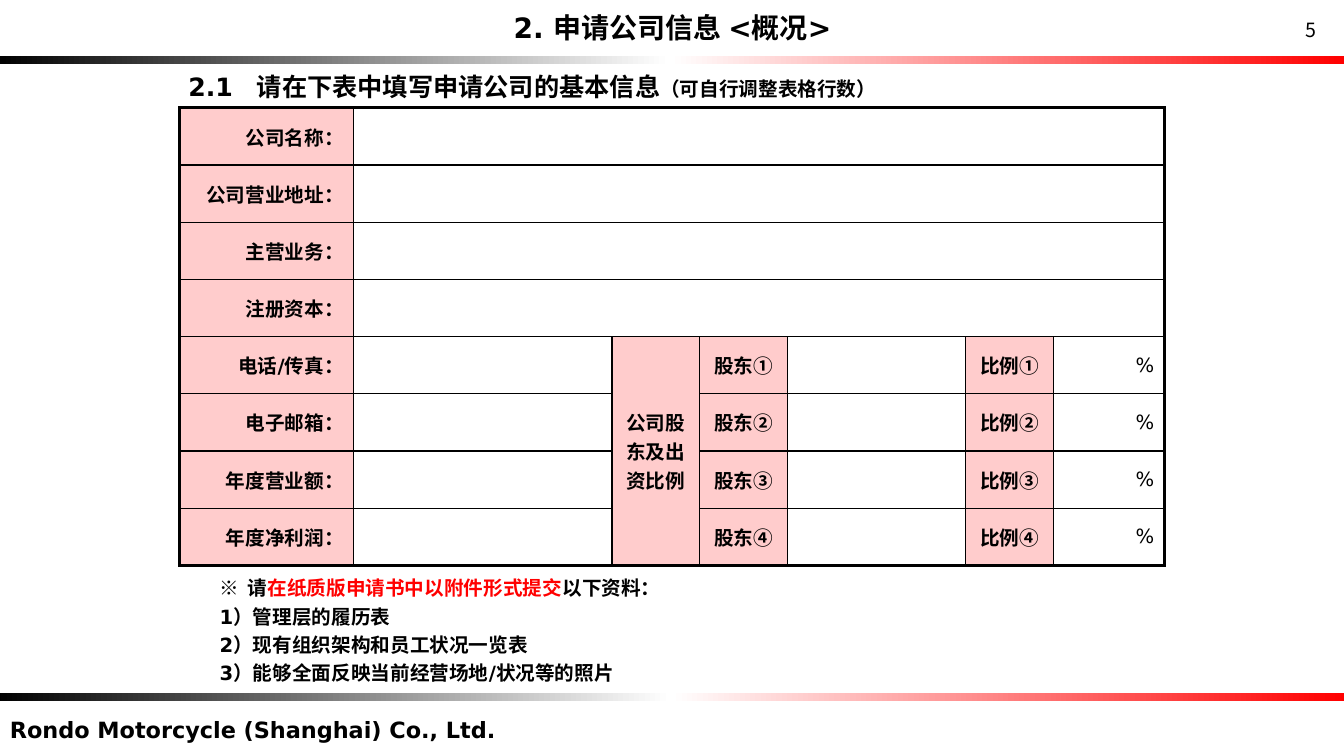
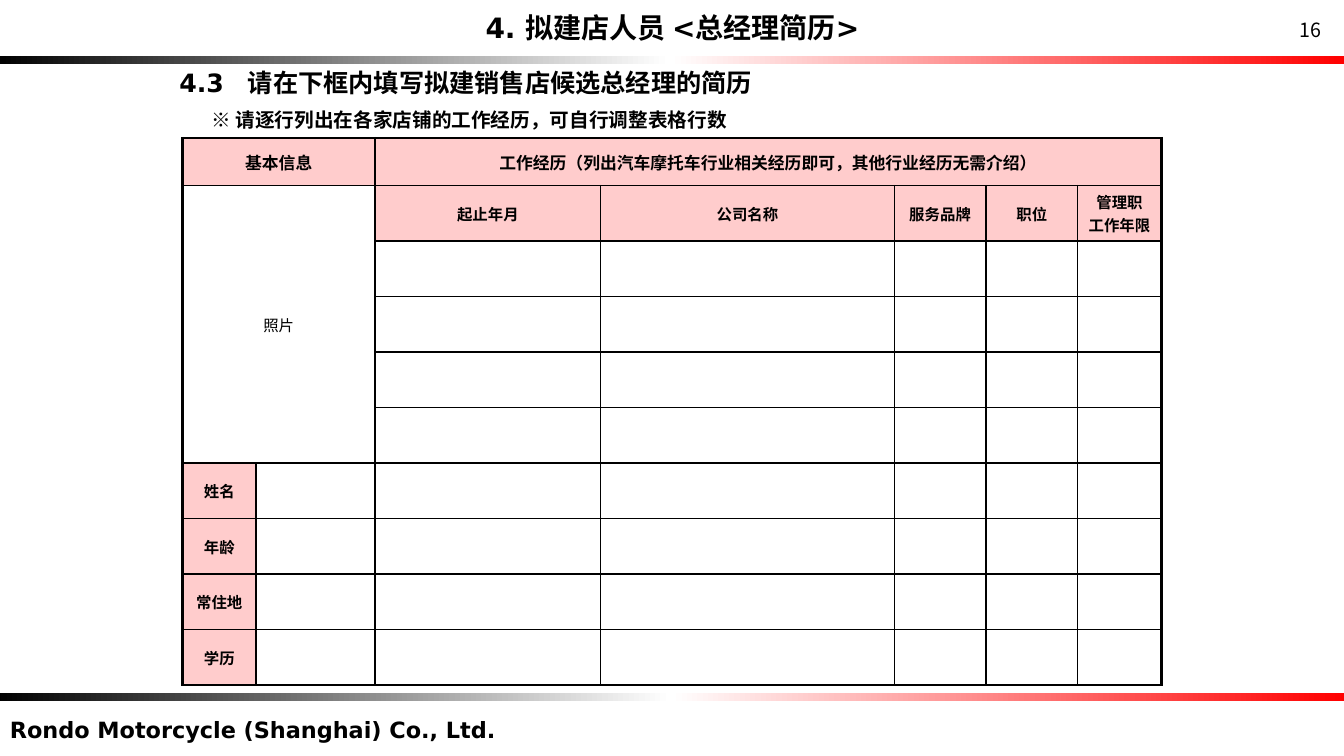
from lxml.etree import SubElement
from pptx import Presentation
from pptx.dml.color import RGBColor
from pptx.enum.shapes import MSO_SHAPE as Shape
from pptx.enum.text import MSO_ANCHOR as Anchor, PP_ALIGN as Align
from pptx.oxml.ns import qn
from pptx.util import Inches, Pt

BLACK, WHITE, RED, PINK = "000000", "FFFFFF", "FF0000", "FFCCCC"
LATIN_FONT, CHINESE_FONT = "DejaVu Sans", "Noto Sans CJK JP"
THICK, THIN = 2.25, 1


def color(value):
    return RGBColor.from_string(value)


class FormDeck:
    """Holds the form style and the slide being built."""

    def __init__(self):
        self.presentation = Presentation()
        self.presentation.slide_width = Inches(13.33)
        self.presentation.slide_height = Inches(7.5)
        self.slide = None

    def add_slide(self, title, number):
        layout = self.presentation.slide_layouts[6]
        self.slide = self.presentation.slides.add_slide(layout)
        for left, top in ((-0.05, 0.56), (-0.04, 6.87)):
            self.add_band(left, top)
        self.add_text(0, 7.05, 7.39, 0.37, ["Rondo Motorcycle (Shanghai) Co., Ltd."], 16)
        self.add_text(12.67, 0.12, 0.66, 0.34, [number], 14, bold=False,
                      align=Align.CENTER, font=CHINESE_FONT)
        self.add_text(3.67, 0.11, 6, 0.33, [title], 20, align=Align.CENTER)

    def add_band(self, left, top):
        band = self.slide.shapes.add_shape(
            Shape.RECTANGLE, Inches(left), Inches(top), Inches(13.39), Inches(0.08))
        band.shadow.inherit = False
        band.line.fill.background()
        band.fill.gradient()
        band.fill.gradient_angle = 0
        stops = band._element.find(".//" + qn("a:gsLst"))
        stops.clear()
        for position, value in ((0, BLACK), (50000, WHITE), (100000, RED)):
            stop = SubElement(stops, qn("a:gs"), pos=str(position))
            SubElement(stop, qn("a:srgbClr"), val=value)

    def style_paragraph(self, paragraph, size, bold=True, align=Align.LEFT,
                        font=LATIN_FONT, tab=None):
        properties = paragraph._p.get_or_add_pPr()
        if tab:
            tabs = SubElement(properties, qn("a:tabLst"))
            SubElement(tabs, qn("a:tab"), pos=str(Inches(tab)), algn="l")
        paragraph.alignment = align
        paragraph.font.name = font
        paragraph.font.size = Pt(size)
        paragraph.font.bold = bold
        paragraph.font.color.rgb = color(BLACK)
        defaults = properties.find(qn("a:defRPr"))
        SubElement(defaults, qn("a:ea"), typeface=CHINESE_FONT)

    def fill_frame(self, frame, lines, size, **style):
        for index, line in enumerate(lines):
            paragraph = frame.add_paragraph() if index else frame.paragraphs[0]
            self.style_paragraph(paragraph, size, **style)
            for part in [line] if isinstance(line, str) else line:
                text, run_size, run_color = (part, None, None) if isinstance(part, str) else part
                run = paragraph.add_run()
                run.text = text
                if run_size:
                    run.font.size = Pt(run_size)
                if run_color:
                    run.font.color.rgb = color(run_color)

    def add_text(self, left, top, width, height, lines, size, spacing=None, **style):
        box = self.slide.shapes.add_textbox(
            Inches(left), Inches(top), Inches(width), Inches(height))
        frame = box.text_frame
        frame.word_wrap = True
        frame.vertical_anchor = Anchor.MIDDLE
        self.fill_frame(frame, lines, size, **style)
        if spacing:
            for paragraph in frame.paragraphs:
                paragraph.line_spacing = Pt(spacing)

    def add_grid(self, left, top, widths, heights, merges):
        table = self.slide.shapes.add_table(
            len(heights), len(widths), Inches(left), Inches(top),
            Inches(sum(widths)), Inches(sum(heights))).table
        table.first_row = table.horz_banding = False
        for column, width in zip(table.columns, widths):
            column.width = Inches(width)
        for row, height in zip(table.rows, heights):
            row.height = Inches(height)
        for first_row, first_column, last_row, last_column in merges:
            table.cell(first_row, first_column).merge(table.cell(last_row, last_column))
        for row in range(len(heights)):
            for column in range(len(widths)):
                cell = table.cell(row, column)
                if not cell.is_spanned:
                    self.draw_borders(cell, row, column, len(heights), len(widths))
                cell.fill.solid()
                cell.fill.fore_color.rgb = color(WHITE)
        return table

    def draw_borders(self, cell, row, column, row_count, column_count):
        outer_edges = {
            "a:lnL": column == 0,
            "a:lnR": column + cell.span_width == column_count,
            "a:lnT": row == 0,
            "a:lnB": row + cell.span_height == row_count,
        }
        properties = cell._tc.get_or_add_tcPr()
        for tag, outer in outer_edges.items():
            width = Pt(THICK if outer else THIN)
            line = SubElement(properties, qn(tag), w=str(width))
            SubElement(SubElement(line, qn("a:solidFill")), qn("a:srgbClr"), val=BLACK)

    def write_cell(self, cell, text, size, fill=PINK, align=Align.CENTER,
                   bold=True, margin=None):
        cell.fill.fore_color.rgb = color(fill)
        cell.vertical_anchor = Anchor.MIDDLE
        if margin:
            cell.margin_left = cell.margin_right = Inches(margin)
            cell.margin_top = cell.margin_bottom = Inches(margin)
        self.fill_frame(cell.text_frame, text.split("\n"), size, align=align, bold=bold)


def build_company_slide(deck):
    deck.add_slide("2. 申请公司信息 <概况>", "5")
    heading = ["2.1\t请在下表中填写申请公司的基本信息", ("（可自行调整表格行数）", 14, None)]
    deck.add_text(1.77, 0.66, 7.2, 0.4, [heading], 18, tab=0.68)

    labels = ["公司名称：", "公司营业地址：", "主营业务：", "注册资本：",
              "电话/传真：", "电子邮箱：", "年度营业额：", "年度净利润："]
    merges = [(row, 1, row, 6) for row in range(4)] + [(4, 2, 7, 2)]
    table = deck.add_grid(1.78, 1.07, [1.73, 2.56, 0.87, 0.87, 1.77, 0.87, 1.1],
                          [4.54 / len(labels)] * len(labels), merges)
    for row, label in enumerate(labels):
        deck.write_cell(table.cell(row, 0), label, 14, align=Align.RIGHT)
    deck.write_cell(table.cell(4, 2), "公司股东及出资比例", 14)
    for row, mark in enumerate("①②③④", start=4):
        deck.write_cell(table.cell(row, 3), "股东" + mark, 14)
        deck.write_cell(table.cell(row, 5), "比例" + mark, 14)
        deck.write_cell(table.cell(row, 6), "%", 14, fill=WHITE, align=Align.RIGHT, bold=False)

    attachments = [
        ["※\t请", ("在纸质版申请书中以附件形式提交", None, RED), "以下资料："],
        "1）管理层的履历表",
        "2）现有组织架构和员工状况一览表",
        "3）能够全面反映当前经营场地/状况等的照片",
    ]
    deck.add_text(2.08, 5.63, 4.65, 1.2, attachments, 14, spacing=20, tab=0.28)


def build_manager_slide(deck):
    deck.add_slide("4. 拟建店人员 <总经理简历>", "16")
    deck.add_text(1.68, 0.62, 6.05, 0.4,
                  ["4.3\t请在下框内填写拟建销售店候选总经理的简历"], 18, tab=0.68)

    merges = [(0, 0, 0, 1), (0, 2, 0, 6), (1, 0, 5, 1)]
    table = deck.add_grid(1.81, 1.37, [0.73, 1.18, 2.24, 2.91, 0.91, 0.91, 0.83],
                          [0.47] + [4.96 / 9] * 9, merges)
    deck.write_cell(table.cell(0, 0), "基本信息", 12, margin=0.02)
    deck.write_cell(table.cell(0, 2),
                    "工作经历（列出汽车摩托车行业相关经历即可，其他行业经历无需介绍）",
                    12, margin=0.02)
    deck.write_cell(table.cell(1, 0), "照片", 11, fill=WHITE, bold=False)
    headers = ["起止年月", "公司名称", "服务品牌", "职位", "管理职\n工作年限"]
    for column, header in enumerate(headers, start=2):
        deck.write_cell(table.cell(1, column), header, 11, margin=0.02)
    for row, label in enumerate(["姓名", "年龄", "常住地", "学历"], start=6):
        deck.write_cell(table.cell(row, 0), label, 11)

    deck.add_text(2, 1.02, 5.38, 0.34,
                  ["※ 请逐行列出在各家店铺的工作经历，可自行调整表格行数"], 14)


def main():
    deck = FormDeck()
    build_company_slide(deck)
    build_manager_slide(deck)
    deck.presentation.save("out.pptx")


if __name__ == "__main__":
    main()
